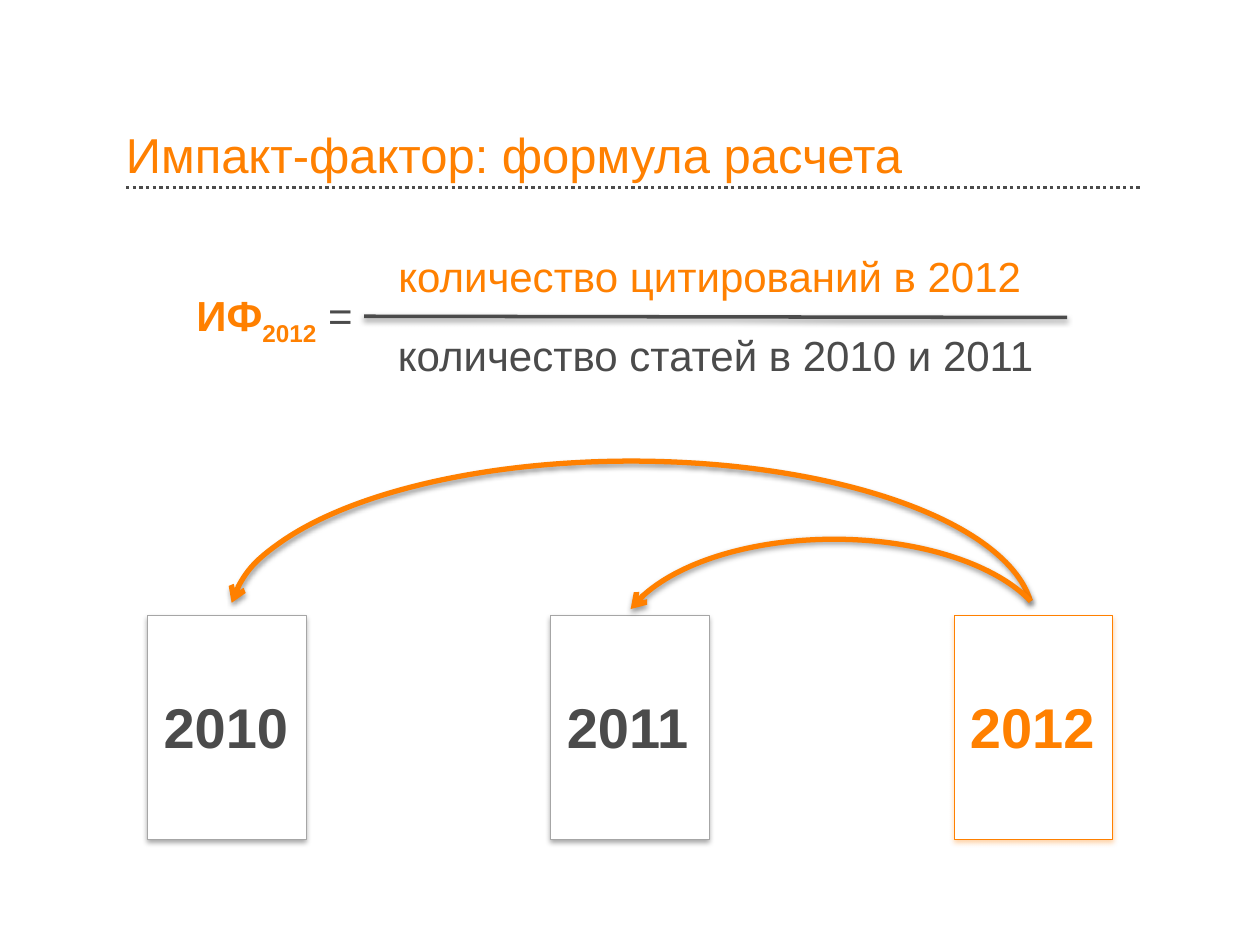
from lxml import etree
from pptx import Presentation
from pptx import util as u
from pptx.dml.color import RGBColor
from pptx.enum import dml, shapes, text
from pptx.oxml.ns import qn

COLORS = {"orange": "FF8000", "dark": "4B4B4B", "gray": "A6A6A6",
          "white": "FFFFFF", "black": "000000"}
COLS, ROWS = 100, 75
CELL = u.Inches(0.1)


def rgb(name):
    """Return the named color."""
    return RGBColor.from_string(COLORS[name])


def grid(*cells):
    """Turn grid columns and rows into lengths."""
    return [u.Emu(round(c * CELL)) for c in cells]


def set_line(sp, color, width):
    """Give a shape a solid outline."""
    sp.line.color.rgb = rgb(color)
    sp.line.width = u.Pt(width)


def set_effects(sp, color=None, alpha=38, dist=1.6):
    """Set a downward shadow, or no effect when no color is given."""
    effects = etree.SubElement(sp._element.spPr, qn("a:effectLst"))
    if color:
        shadow = etree.SubElement(
            effects, qn("a:outerShdw"), blurRad=str(u.Pt(3.1)),
            dist=str(u.Pt(dist)), dir="5400000", rotWithShape="0")
        clr = etree.SubElement(shadow, qn("a:srgbClr"), val=COLORS[color])
        etree.SubElement(clr, qn("a:alpha"), val=str(alpha * 1000))


def add_run(p, words, size, color, bold=False, baseline=None):
    """Append one formatted run to a paragraph."""
    r = p.add_run()
    r.text = words
    r.font.name = "Arial"
    r.font.size = u.Pt(size)
    r.font.bold = bold
    r.font.color.rgb = rgb(color)
    if baseline:
        r.font._element.set("baseline", str(baseline * 1000))


def add_label(parent, box, runs, align=text.PP_ALIGN.LEFT):
    """Add a one-line text box that fits its text."""
    tf = parent.add_textbox(*grid(*box)).text_frame
    tf.word_wrap = False
    tf.auto_size = text.MSO_AUTO_SIZE.SHAPE_TO_FIT_TEXT
    p = tf.paragraphs[0]
    p.alignment = align
    for run in runs:
        add_run(p, *run)


def add_title(s, words):
    """Add the title above its dotted rule."""
    rule = add_rule(s, (10, 14.9, 90.6, 14.9), 1.9)
    rule.line.dash_style = dml.MSO_LINE.ROUND_DOT
    set_effects(rule)
    tf = s.shapes.add_textbox(*grid(10, 5.5, 80.6, 9.1)).text_frame
    tf.word_wrap = True
    tf.vertical_anchor = text.MSO_ANCHOR.BOTTOM
    tf.margin_left = tf.margin_right = tf.margin_top = tf.margin_bottom = 0
    p = tf.paragraphs[0]
    p.line_spacing = 0.9
    add_run(p, words, 28, "orange")


def add_rule(s, ends, width):
    """Add a dark straight line."""
    line = s.shapes.add_connector(shapes.MSO_CONNECTOR.STRAIGHT, *grid(*ends))
    set_line(line, "dark", width)
    return line


def add_formula(s):
    """Add the impact factor fraction."""
    center = text.PP_ALIGN.CENTER
    add_label(s.shapes, (14.6, 22.5, 15.2, 5), [
        ("ИФ", 24, "orange", True), ("2012", 24, "orange", True, -25),
        (" =", 24, "dark")])
    add_label(s.shapes, (30.5, 19.4, 52.6, 5),
              [("количество цитирований в 2012 ", 24, "orange")], center)
    add_label(s.shapes, (30.2, 25.7, 53.2, 5),
              [("количество статей в 2010 и 2011", 24, "dark")], center)
    set_effects(add_rule(s, (28.9, 25.1, 84.7, 25.2), 2), "black")


def add_year(s, left, year, color, border, shadow):
    """Add a grouped year card."""
    group = s.shapes.add_group_shape().shapes
    card = group.add_shape(shapes.MSO_SHAPE.RECTANGLE,
                           *grid(left, 48.8, 12.6, 17.8))
    card.fill.solid()
    card.fill.fore_color.rgb = rgb("white")
    set_line(card, border, 0.25)
    set_effects(card, shadow, 35, 1.8)
    add_label(group, (left + 0.3, 54.5, 12, 6.4), [(year, 32, color, True)])


def add_arc(s, box, angles):
    """Add a curved arrow pointing back to an earlier year."""
    arc = s.shapes.add_shape(shapes.MSO_SHAPE.ARC, *grid(*box))
    for i, degrees in enumerate(angles):
        arc.adjustments[i] = degrees * 0.6
    arc.fill.background()
    set_line(arc, "orange", 3)
    etree.SubElement(arc.line._get_or_add_ln(), qn("a:headEnd"), type="arrow")
    set_effects(arc, "black")


def main():
    """Build and save the slide."""
    prs = Presentation()
    prs.slide_width, prs.slide_height = grid(COLS, ROWS)
    s = prs.slides.add_slide(prs.slide_layouts[6])
    add_title(s, "Импакт-фактор: формула расчета")
    years = [("2010", "dark", "gray", "black"),
             ("2011", "dark", "gray", "black"),
             ("2012", "orange", "orange", "orange")]
    for i, year in enumerate(years):
        add_year(s, 11.7 + 32 * i, *year)
    add_arc(s, (18.2, 36.6, 63.8, 25.2), (182.45, 357.3))
    add_arc(s, (48.9, 42.8, 34.6, 17.3), (190.9, 346.55))
    add_formula(s)
    prs.save("out.pptx")


if __name__ == "__main__":
    main()
